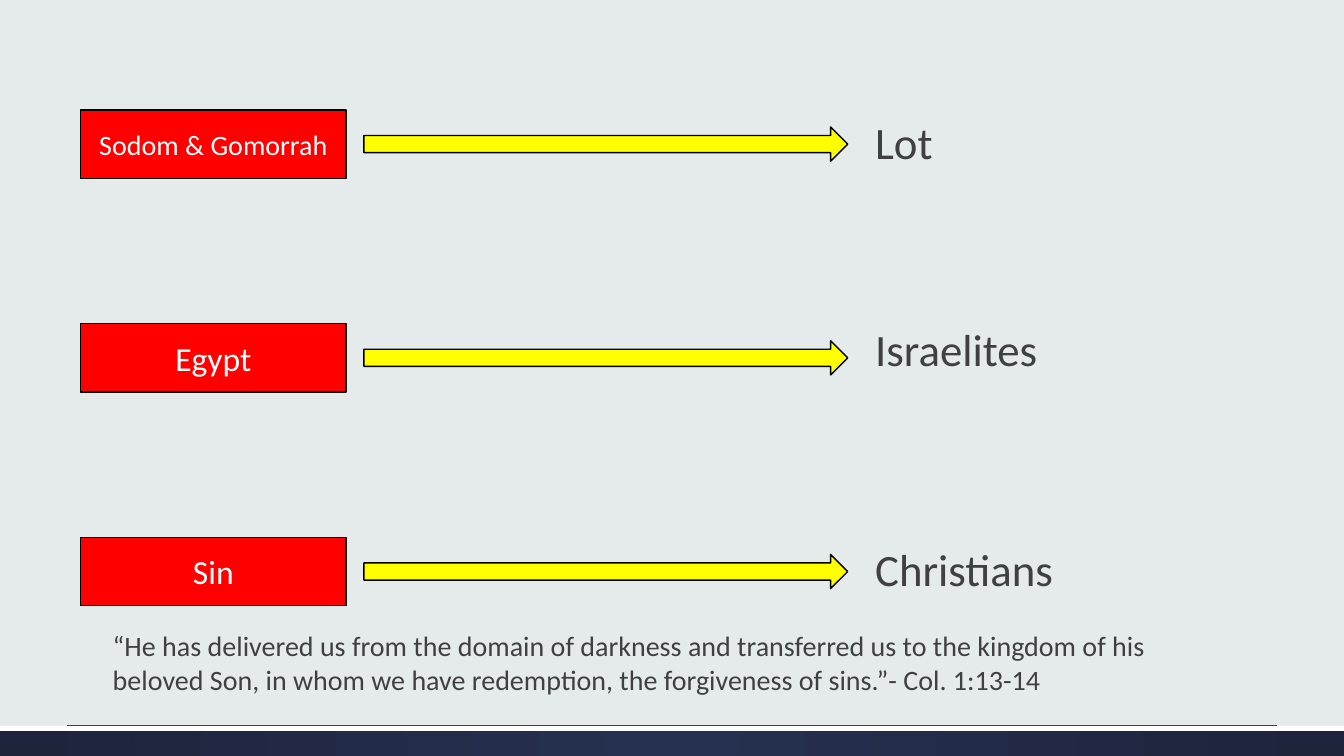
import lxml.etree
import pptx
import pptx.dml.color
import pptx.enum.shapes
import pptx.enum.text
import pptx.oxml
import pptx.oxml.ns
import pptx.util

RGBColor = pptx.dml.color.RGBColor
Shape = pptx.enum.shapes.MSO_SHAPE
Align = pptx.enum.text.PP_ALIGN
Anchor = pptx.enum.text.MSO_ANCHOR
AutoSize = pptx.enum.text.MSO_AUTO_SIZE

BACKGROUND = RGBColor(0xE5, 0xEA, 0xEA)
NAVY = RGBColor(0x26, 0x30, 0x50)
DEEP_NAVY = RGBColor(0x1D, 0x24, 0x3C)
RED = RGBColor(0xFF, 0x00, 0x00)
YELLOW = RGBColor(0xFF, 0xFF, 0x00)
WHITE = RGBColor(0xFF, 0xFF, 0xFF)
BLACK = RGBColor(0x00, 0x00, 0x00)
GREY = RGBColor(0x40, 0x40, 0x40)

COLUMNS, ROWS = 80, 45
FIRST_ROW, ROW_STEP = 6.54, 12.72
BOX_HEIGHT, ARROW_HEIGHT = 4.08, 2.04

# bondage, its text size, the people delivered, row of their label
DELIVERANCES = [
    ("Sodom & Gomorrah", 20, "Lot", 6.54),
    ("Egypt", 24, "Israelites", 18.84),
    ("Sin", 24, "Christians", 31.98),
]
QUOTE = (
    "“He has delivered us from the domain of darkness and transferred us to "
    "the kingdom of his beloved Son, in whom we have redemption, the "
    "forgiveness of sins.”- Col. 1:13-14"
)


def write(frame, text, size=20, color=GREY, align=Align.LEFT, font="Calibri"):
    para = frame.paragraphs[0]
    para.alignment = align
    span = para.add_run()
    span.text = text
    span.font.name = font
    span.font.size = pptx.util.Pt(size)
    span.font.color.rgb = color


class SlidePainter:
    """Places elements on the page by grid column and row."""

    def __init__(self, deck):
        self.column = deck.slide_width / COLUMNS
        self.row = deck.slide_height / ROWS
        self.page = deck.slides.add_slide(deck.slide_layouts[6])
        self.page.background.fill.solid()
        self.page.background.fill.fore_color.rgb = BACKGROUND

    def place(self, left, top, width, height):
        return (round(left * self.column), round(top * self.row),
                round(width * self.column), round(height * self.row))

    def shape(self, kind, area, color, outline=None):
        shape = self.page.shapes.add_shape(kind, *self.place(*area))
        shape.shadow.inherit = False
        shape.fill.solid()
        shape.fill.fore_color.rgb = color
        if outline is None:
            shape.line.fill.background()
        else:
            shape.line.color.rgb = outline
            shape.line.width = pptx.util.Pt(1)
        return shape

    def radial_band(self, area, center, edge):
        band = self.shape(Shape.RECTANGLE, area, center)
        band.fill.gradient()
        for stop, color in zip(band.fill.gradient_stops, (center, edge)):
            stop.color.rgb = color
        gradient = band.fill._fill._gradFill
        gradient.remove(gradient.find(pptx.oxml.ns.qn("a:lin")))
        gradient.append(pptx.oxml.parse_xml(
            '<a:path xmlns:a="http://schemas.openxmlformats.org/drawingml/2006/main"'
            ' path="circle"><a:fillToRect l="50000" t="50000" r="50000" b="50000"/>'
            '</a:path>'))

    def rule(self, left, right, row):
        x1, y, width, _ = self.place(left, row, right - left, 0)
        line = self.page.shapes.add_connector(
            pptx.enum.shapes.MSO_CONNECTOR.STRAIGHT, x1, y, x1 + width, y)
        line.line.color.rgb = GREY
        line.line.width = pptx.util.Pt(0.75)
        properties = line._element.spPr
        lxml.etree.SubElement(properties, pptx.oxml.ns.qn("a:effectLst"))

    def box(self, area, text, size):
        box = self.shape(Shape.RECTANGLE, area, RED, outline=BLACK)
        box.text_frame.vertical_anchor = Anchor.MIDDLE
        write(box.text_frame, text, size=size, color=WHITE, align=Align.CENTER)

    def text(self, area, text, size, wrap=True):
        frame = self.page.shapes.add_textbox(*self.place(*area)).text_frame
        frame.word_wrap = wrap
        frame.auto_size = AutoSize.SHAPE_TO_FIT_TEXT
        write(frame, text, size=size)


def main():
    deck = pptx.Presentation()
    deck.slide_width = pptx.util.Inches(13.33)
    deck.slide_height = pptx.util.Inches(7.5)
    painter = SlidePainter(deck)

    painter.radial_band((0, 43.2, COLUMNS, 1.8), NAVY, DEEP_NAVY)
    painter.shape(Shape.RECTANGLE, (0, 43.2, COLUMNS, 0.3), WHITE)
    painter.rule(4, 76, 43.17)

    for index, (bondage, size, people, label_row) in enumerate(DELIVERANCES):
        top = FIRST_ROW + index * ROW_STEP
        arrow_top = top + (BOX_HEIGHT - ARROW_HEIGHT) / 2
        painter.box((4.8, top, 15.8, BOX_HEIGHT), bondage, size)
        painter.shape(Shape.RIGHT_ARROW, (21.66, arrow_top, 28.8, ARROW_HEIGHT),
                      YELLOW, outline=BLACK)
        painter.text((51.5, label_row, 12, 3.84), people, 32, wrap=False)
    painter.text((6.12, 37.14, 64.8, 4.62), QUOTE, 20)

    deck.save("out.pptx")


if __name__ == "__main__":
    main()
